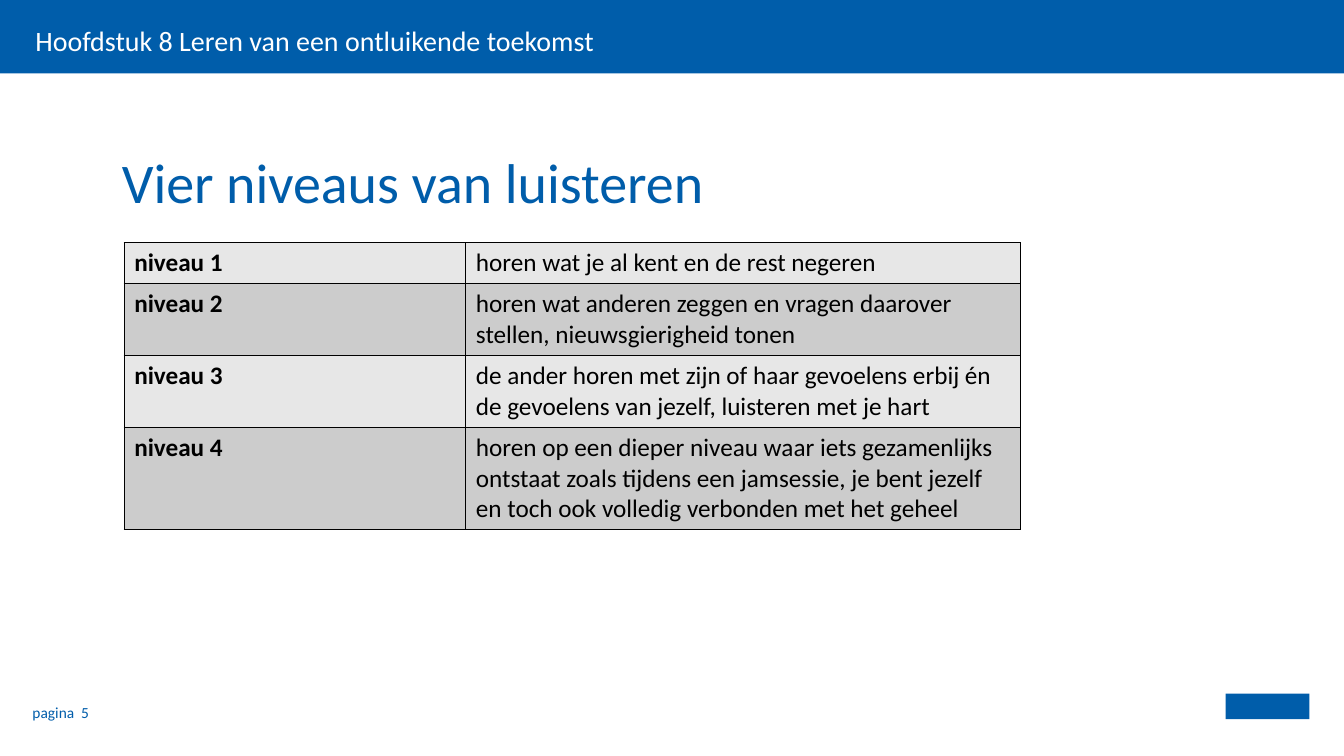
from dataclasses import dataclass

import pptx
import pptx.dml.color
import pptx.enum.shapes
import pptx.enum.text
import pptx.oxml
import pptx.oxml.ns
import pptx.util
from pptx.dml.color import RGBColor
from pptx.util import Cm

BLUE = RGBColor(0x00, 0x5D, 0xAA)
WHITE = RGBColor(0xFF, 0xFF, 0xFF)
BLACK = RGBColor(0x00, 0x00, 0x00)
LIGHT_GREY = RGBColor(0xE7, 0xE7, 0xE7)
DARK_GREY = RGBColor(0xCC, 0xCC, 0xCC)
FONT = "Calibri"


@dataclass
class Box:
    left: float
    top: float
    width: float
    height: float

    def lengths(self) -> tuple:
        return Cm(self.left), Cm(self.top), Cm(self.width), Cm(self.height)


@dataclass
class Level:
    name: str
    meaning: str
    height: float


LEVELS = [
    Level("niveau 1", "horen wat je al kent en de rest negeren", 1.03),
    Level("niveau 2", "horen wat anderen zeggen en vragen daarover stellen, "
          "nieuwsgierigheid tonen", 1.81),
    Level("niveau 3", "de ander horen met zijn of haar gevoelens erbij én "
          "de gevoelens van jezelf, luisteren met je hart", 1.81),
    Level("niveau 4", "horen op een dieper niveau waar iets gezamenlijks ontstaat "
          "zoals tijdens een jamsessie, je bent jezelf en toch ook volledig "
          "verbonden met het geheel", 2.58),
]
COLUMN_WIDTHS = (8.61, 13.97)


def write(frame, text: str, size: float, color: RGBColor, bold: bool = False) -> None:
    frame.text = text
    frame.word_wrap = True
    paragraph = frame.paragraphs[0]
    paragraph.alignment = pptx.enum.text.PP_ALIGN.LEFT
    font = paragraph.runs[0].font
    font.name, font.size, font.bold = FONT, pptx.util.Pt(size), bold
    font.color.rgb = color


def place_text(shape, box: Box, text: str, size: float, color: RGBColor, anchor) -> None:
    shape.left, shape.top, shape.width, shape.height = box.lengths()
    frame = shape.text_frame
    write(frame, text, size, color)
    frame.auto_size = pptx.enum.text.MSO_AUTO_SIZE.NONE
    frame.vertical_anchor = anchor
    frame.margin_left = frame.margin_right = frame.margin_top = frame.margin_bottom = 0


def add_block(slide, box: Box):
    block = slide.shapes.add_shape(pptx.enum.shapes.MSO_SHAPE.RECTANGLE, *box.lengths())
    block.shadow.inherit = False
    block.fill.solid()
    block.fill.fore_color.rgb = BLUE
    block.line.fill.background()
    return block


def add_borders(cell) -> None:
    properties = cell._tc.get_or_add_tcPr()
    for index, side in enumerate(("lnL", "lnR", "lnT", "lnB")):
        properties.insert(index, pptx.oxml.parse_xml(
            f'<a:{side} {pptx.oxml.ns.nsdecls("a")} w="12700"><a:solidFill>'
            f'<a:srgbClr val="{BLACK}"/></a:solidFill></a:{side}>'))


def add_levels(slide, left: float, top: float) -> None:
    box = Box(left, top, sum(COLUMN_WIDTHS), sum(level.height for level in LEVELS))
    table = slide.shapes.add_table(len(LEVELS), len(COLUMN_WIDTHS), *box.lengths()).table
    table.first_row = False
    for column, width in zip(table.columns, COLUMN_WIDTHS):
        column.width = Cm(width)
    for index, (row, level) in enumerate(zip(table.rows, LEVELS)):
        row.height = Cm(level.height)
        for cell, text in zip(row.cells, (level.name, level.meaning)):
            write(cell.text_frame, text, 18, BLACK, bold=text == level.name)
            cell.fill.solid()
            cell.fill.fore_color.rgb = DARK_GREY if index % 2 else LIGHT_GREY
            add_borders(cell)


def main() -> None:
    presentation = pptx.Presentation()
    presentation.slide_width, presentation.slide_height = Cm(33.87), Cm(19.05)
    slide = presentation.slides.add_slide(presentation.slide_layouts[1])
    anchors = pptx.enum.text.MSO_ANCHOR

    # Chapter bar, behind the placeholders
    bar = add_block(slide, Box(0, 0, 33.87, 1.85))
    slide.shapes._spTree.insert(2, bar._element)

    # Title and chapter
    place_text(slide.shapes.title, Box(3.07, 2.79, 29, 2.62),
               "Vier niveaus van luisteren", 40, BLUE, anchors.BOTTOM)
    chapter = slide.placeholders[1]
    place_text(chapter, Box(0.89, 0.53, 14.86, 1),
               "Hoofdstuk 8 Leren van een ontluikende toekomst", 20, WHITE, anchors.TOP)
    heading = chapter.text_frame.paragraphs[0]
    heading.line_spacing = 1.08
    heading.space_before = pptx.util.Pt(0)
    settings = heading._p.get_or_add_pPr()
    settings.set("marL", "0")
    settings.set("indent", "0")
    settings.append(pptx.oxml.parse_xml(f'<a:buNone {pptx.oxml.ns.nsdecls("a")}/>'))

    # Listening levels
    add_levels(slide, 3.13, 6.12)

    # Footer: page number and publisher block
    page = slide.shapes.add_textbox(0, 0, 0, 0)
    place_text(page, Box(0.82, 17.45, 3.6, 1.02), "pagina  5", 11, BLUE, anchors.MIDDLE)
    add_block(slide, Box(30.89, 17.48, 2.11, 0.64))

    presentation.save("out.pptx")


if __name__ == "__main__":
    main()
